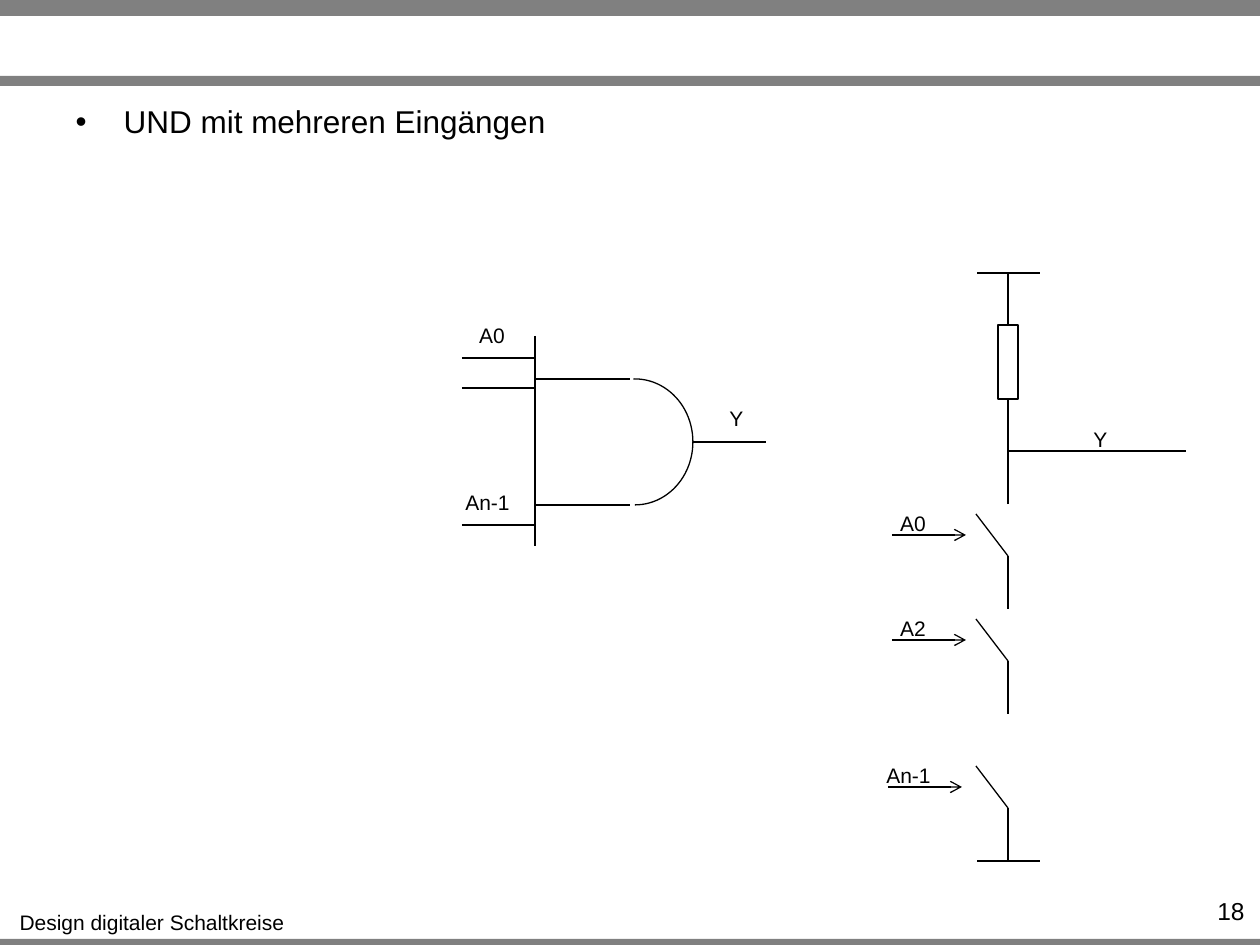
import dataclasses
import typing

import lxml.etree
import pptx
import pptx.dml.color
import pptx.enum.shapes
import pptx.enum.text
import pptx.oxml.ns
import pptx.util

EMU_PER_PX = 914400 / 126
SHAPES = pptx.enum.shapes.MSO_SHAPE
ALIGN = pptx.enum.text.PP_ALIGN
Point = tuple[int, int]


@dataclasses.dataclass(frozen=True)
class Theme:
    font: str = "Arial"
    ink: str = "000000"
    bar: str = "808080"
    body_size: int = 18
    number_size: int = 14
    label_size: int = 12
    line_width: float = 0.75


class Box(typing.NamedTuple):
    left: int
    top: int
    width: int
    height: int


class Label(typing.NamedTuple):
    text: str
    left: int
    top: int
    width: int


class Switch(typing.NamedTuple):
    name: str
    pivot_y: int
    arrow_left: int
    label_left: int
    label_width: int


THEME = Theme()
LABEL_HEIGHT = 38
SUPPLY_X = 1008
SUPPLY_Y, OUTPUT_Y, GROUND_Y = 273, 451, 861
GATE_X, GATE_TOP, GATE_BOTTOM = 535, 379, 505

BARS = [Box(0, 939, 1260, 6), Box(0, 0, 1260, 16), Box(0, 76, 1260, 10)]
LABELS = [
    Label("Design digitaler Schaltkreise", 4, 903, 296),
    Label("Y", 717, 399, 39),
    Label("A0", 466, 316, 52),
    Label("An-1", 452, 483, 71),
    Label("Y", 1081, 420, 39),
]
SWITCHES = [
    Switch("A0", 556, 892, 887, 52),
    Switch("A2", 661, 892, 887, 52),
    Switch("An-1", 808, 888, 873, 71),
]
GATE_LINES = [
    *(((462, y), (GATE_X, y)) for y in (358, 388, 525)),
    *(((GATE_X, y), (630, y)) for y in (GATE_TOP, GATE_BOTTOM)),
    ((GATE_X, 336), (GATE_X, 546)),
    ((693, 442), (766, 442)),
]


def emu(px: int) -> int:
    return round(px * EMU_PER_PX)


def colour(value: str) -> pptx.dml.color.RGBColor:
    return pptx.dml.color.RGBColor.from_string(value)


def add_span(para, text: str, size: int) -> None:
    span = para.add_run()
    span.text = text
    span.font.name = THEME.font
    span.font.size = pptx.util.Pt(size)
    span.font.color.rgb = colour(THEME.ink)


def add_text(page, box: Box, text: str, size: int, align, wrap: bool):
    frame = page.shapes.add_textbox(*map(emu, box)).text_frame
    frame.word_wrap = wrap
    para = frame.paragraphs[0]
    para.alignment = align
    add_span(para, text, size)
    return frame


def add_label(page, label: Label) -> None:
    box = Box(label.left, label.top, label.width, LABEL_HEIGHT)
    frame = add_text(page, box, label.text, THEME.label_size, ALIGN.CENTER, False)
    frame.auto_size = pptx.enum.text.MSO_AUTO_SIZE.SHAPE_TO_FIT_TEXT


def style_line(line) -> None:
    line.color.rgb = colour(THEME.ink)
    line.width = pptx.util.Pt(THEME.line_width)


def add_line(page, start: Point, end: Point, arrow: bool = False):
    line = page.shapes.add_connector(
        pptx.enum.shapes.MSO_CONNECTOR.STRAIGHT, *map(emu, (*start, *end)))
    style_line(line.line)
    qn = pptx.oxml.ns.qn
    if arrow:
        lxml.etree.SubElement(line.line._ln, qn("a:tailEnd"), type="arrow")
    lxml.etree.SubElement(line._element.spPr, qn("a:effectLst"))
    return line


def add_outline(page, kind, box: Box):
    shape = page.shapes.add_shape(kind, *map(emu, box))
    shape.shadow.inherit = False
    shape.fill.background()
    style_line(shape.line)
    return shape


def add_bar(page, box: Box) -> None:
    bar = page.shapes.add_shape(SHAPES.RECTANGLE, *map(emu, box))
    bar.shadow.inherit = False
    bar.fill.solid()
    bar.fill.fore_color.rgb = colour(THEME.bar)
    bar.line.fill.background()


def fill_body(body, text: str) -> None:
    body.left, body.top, body.width, body.height = map(emu, Box(63, 96, 1134, 272))
    body.text_frame.auto_size = pptx.enum.text.MSO_AUTO_SIZE.NONE
    para = body.text_frame.paragraphs[0]
    para.space_before = pptx.util.Pt(0)
    settings = para._p.get_or_add_pPr()
    settings.set("marL", str(emu(48)))
    settings.set("indent", str(emu(-48)))
    qn = pptx.oxml.ns.qn
    lxml.etree.SubElement(settings, qn("a:buFont"), typeface=THEME.font)
    lxml.etree.SubElement(settings, qn("a:buChar"), char="•")
    add_span(para, text, THEME.body_size)


def add_gate(page) -> None:
    for start, end in GATE_LINES:
        add_line(page, start, end)
    arc = add_outline(page, SHAPES.ARC, Box(577, GATE_TOP, 116, GATE_BOTTOM - GATE_TOP))
    arc.adjustments[0] = 161.1
    arc.adjustments[1] = 54


def add_rail(page, y: int) -> None:
    add_line(page, (SUPPLY_X + 32, y), (SUPPLY_X - 31, y))


def add_switch(page, switch: Switch) -> None:
    """Draw the open contact, its lower lead and the arrow that drives it."""
    pivot = (SUPPLY_X, switch.pivot_y)
    add_line(page, (SUPPLY_X, switch.pivot_y + 53), pivot)
    add_line(page, pivot, (SUPPLY_X - 32, switch.pivot_y - 42))
    arrow_y = switch.pivot_y - 21
    add_line(page, (switch.arrow_left, arrow_y), (switch.arrow_left + 74, arrow_y), arrow=True)
    add_label(page, Label(switch.name, switch.label_left, switch.pivot_y - 52, switch.label_width))


def add_switch_chain(page) -> None:
    add_rail(page, SUPPLY_Y)
    resistor = add_outline(page, SHAPES.RECTANGLE, Box(SUPPLY_X - 10, 325, 20, 74))
    add_line(page, (SUPPLY_X, 325), (SUPPLY_X, SUPPLY_Y)).begin_connect(resistor, 0)
    add_line(page, (SUPPLY_X, OUTPUT_Y), (SUPPLY_X, 399)).end_connect(resistor, 2)
    add_line(page, (SUPPLY_X, 504), (SUPPLY_X, OUTPUT_Y))
    add_line(page, (SUPPLY_X, OUTPUT_Y), (1186, OUTPUT_Y))
    for switch in SWITCHES:
        add_switch(page, switch)
    add_rail(page, GROUND_Y)


def main() -> None:
    deck = pptx.Presentation()
    deck.slide_width, deck.slide_height = emu(1260), emu(945)
    page = deck.slides.add_slide(deck.slide_layouts[1])
    title = page.shapes.title._element
    title.getparent().remove(title)
    fill_body(page.placeholders[1], "UND mit mehreren Eingängen")
    for bar in BARS:
        add_bar(page, bar)
    add_gate(page)
    add_switch_chain(page)
    for label in LABELS:
        add_label(page, label)
    add_text(page, Box(1147, 890, 110, 30), "18", THEME.number_size, ALIGN.RIGHT, True)
    deck.save("out.pptx")


if __name__ == "__main__":
    main()
